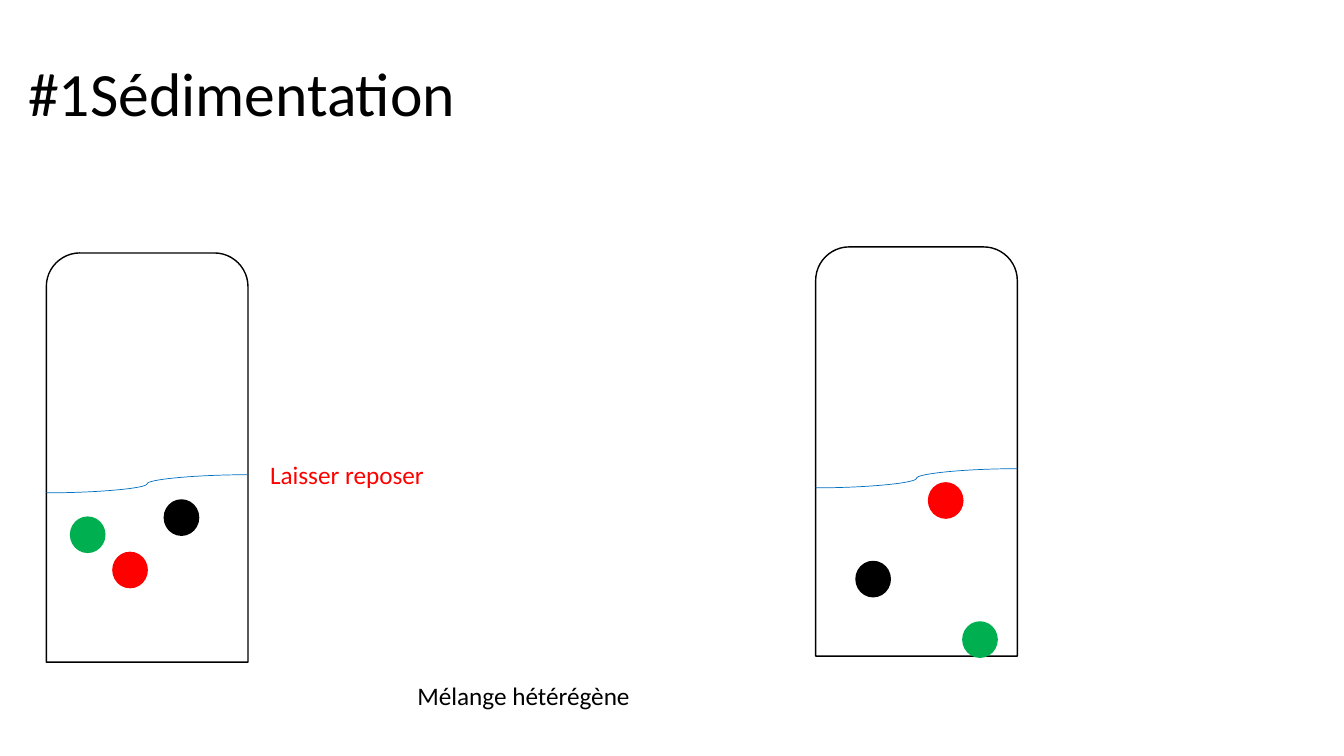
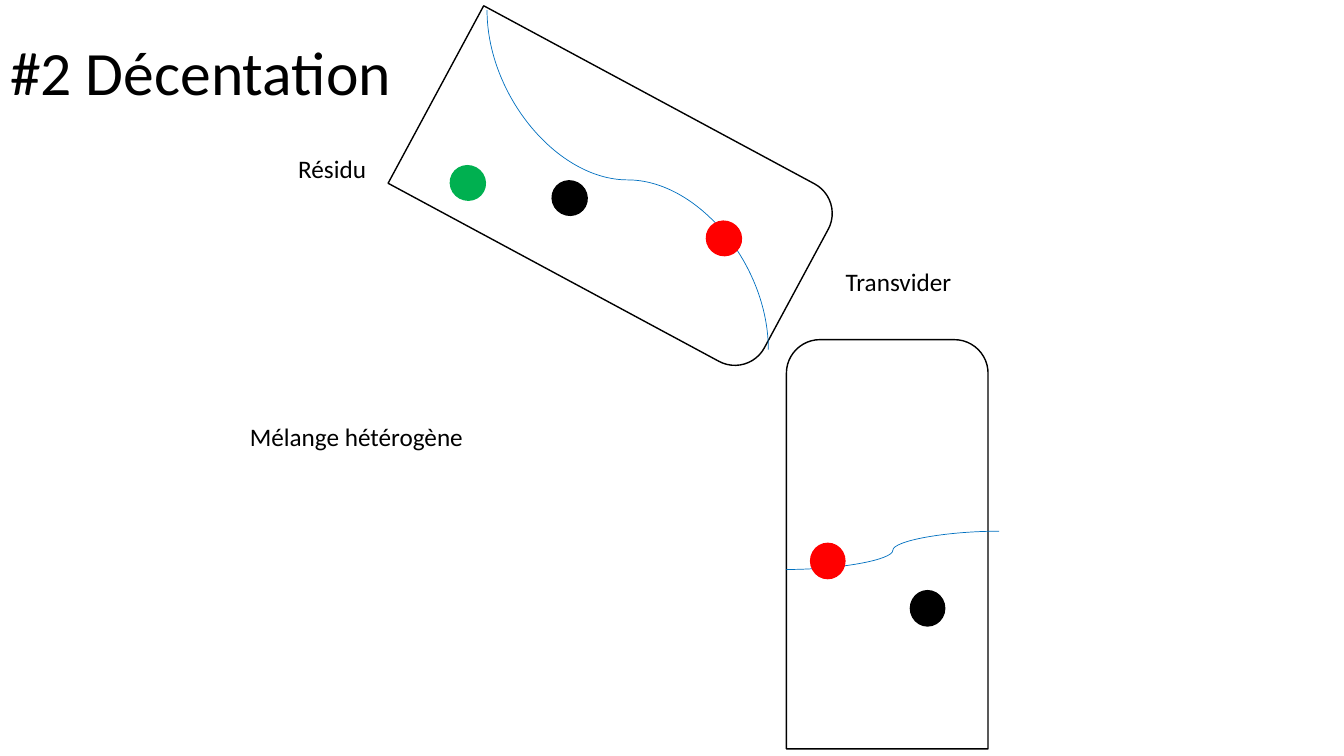
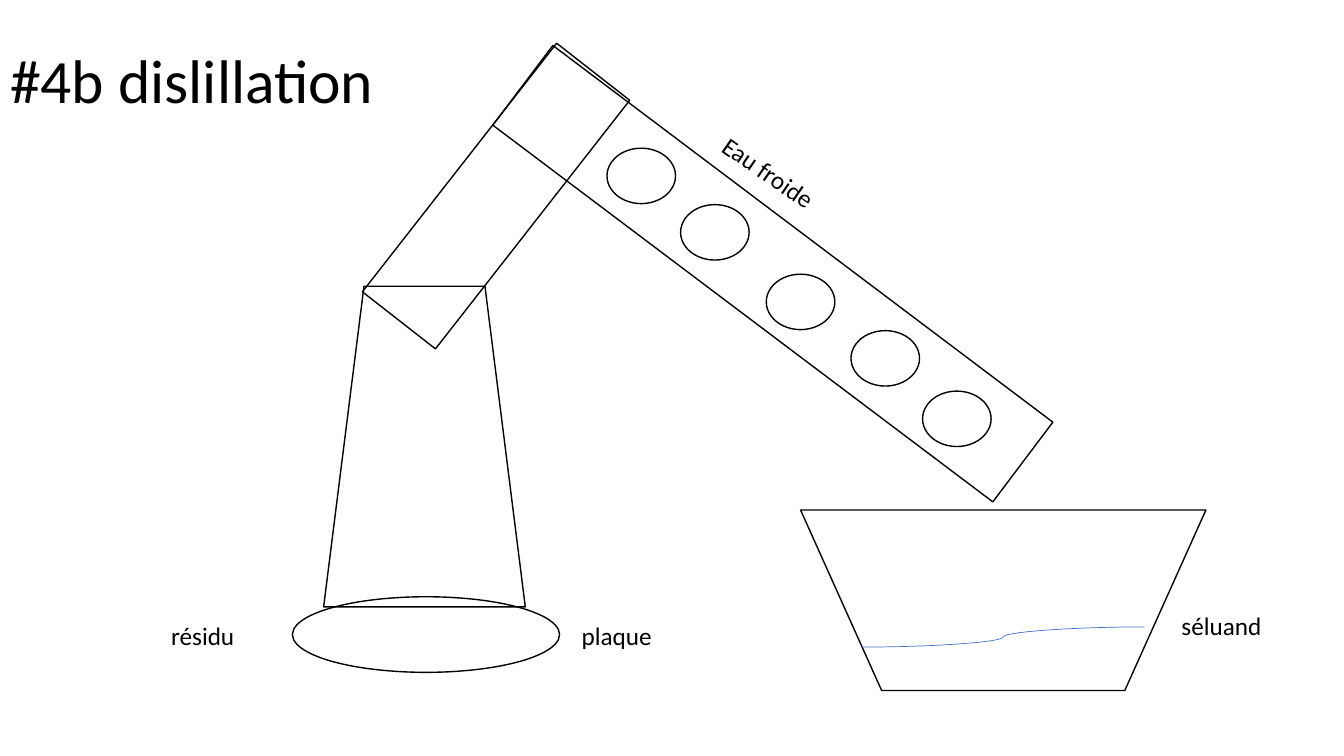
from lxml.etree import SubElement
from pptx import Presentation
from pptx.dml.color import RGBColor
from pptx.enum.shapes import MSO_CONNECTOR, MSO_SHAPE
from pptx.enum.text import MSO_ANCHOR, MSO_AUTO_SIZE, PP_ALIGN
from pptx.oxml.ns import qn
from pptx.util import Emu, Pt

FONT = "Calibri"
BLACK = RGBColor(0x00, 0x00, 0x00)
RED = RGBColor(0xFF, 0x00, 0x00)
GREEN = RGBColor(0x00, 0xB0, 0x50)
WATER = RGBColor(0x00, 0x70, 0xC0)
SOLVENT = RGBColor(0x44, 0x72, 0xC4)

EMU_PER_PX = 9144
TITLE_SIZE = (1150, 145)
TUBE_SIZE = (200, 406)
PARTICLE_SIZE = (34, 35)
COIL_SIZE = (68, 55)
LABEL_HEIGHT = 40

TUBE = MSO_SHAPE.ROUND_2_SAME_RECTANGLE
FLASK = MSO_SHAPE.FLOWCHART_MANUAL_OPERATION
OVAL = MSO_SHAPE.OVAL
PIPE = MSO_SHAPE.RECTANGLE

COILS = [(602, 147), (675, 203), (760, 272), (844, 328), (915, 388)]

# Vessels: preset, position, size, rotation. Surfaces: start, end, colour, rotation.
# Particles: position, colour, rotation. Labels: text, position, width, colour, rotation.
SLIDES = [
    {
        "title": ("#1Sédimentation", (18, 23)),
        "vessels": [(TUBE, (46, 251), TUBE_SIZE, 0), (TUBE, (809, 245), TUBE_SIZE, 0)],
        "surfaces": [((46, 489), (246, 471), WATER, 0), ((809, 484), (1009, 465), WATER, 0)],
        "particles": [
            ((70, 513), GREEN, 0), ((112, 548), RED, 0), ((163, 496), BLACK, 0),
            ((955, 617), GREEN, 0), ((921, 479), RED, 0), ((849, 557), BLACK, 0),
        ],
        "labels": [
            ("Laisser reposer", (258, 451), 200, RED, 0),
            ("Mélange hétérégène", (404, 670), 285, BLACK, 0),
        ],
    },
    {
        "title": ("#2 Décentation", (0, 2)),
        "vessels": [(TUBE, (511, -13), TUBE_SIZE, 118.3), (TUBE, (780, 337), TUBE_SIZE, 0)],
        "surfaces": [((791, 39), (454, 318), WATER, 270), ((780, 565), (991, 527), WATER, 0)],
        "particles": [
            ((447, 164), GREEN, 118.3), ((701, 219), RED, 118.3), ((548, 179), BLACK, 118.3),
            ((804, 539), RED, 0), ((903, 586), BLACK, 0),
        ],
        "labels": [
            ("Résidu", (286, 147), 200, BLACK, 0),
            ("Transvider", (829, 259), 200, BLACK, 0),
            ("Mélange hétérogène", (238, 413), 363, BLACK, 0),
        ],
    },
    {
        "title": ("#4b dislillation", (0, 10)),
        "vessels": [
            (FLASK, (321, 284), (200, 318), 180),
            (OVAL, (290, 592), (265, 75), 0),
            (PIPE, (446, 38), (92, 313), 38),
            (PIPE, (717, -39), (99, 621), 127),
            *[(OVAL, coil, COIL_SIZE, 0) for coil in COILS],
            (FLASK, (794, 506), (402, 179), 0),
        ],
        "surfaces": [((855, 642), (1135, 622), SOLVENT, 0)],
        "particles": [],
        "labels": [
            ("plaque", (567, 610), 200, BLACK, 0),
            ("résidu", (160, 610), 200, BLACK, 0),
            ("Eau froide", (694, 173), 200, BLACK, 34.6),
            ("séluand", (1162, 601), 200, BLACK, 0),
        ],
    },
]


def px(*lengths):
    return [Emu(length * EMU_PER_PX) for length in lengths]


def set_font(paragraph, size, colour):
    paragraph.font.name = FONT
    paragraph.font.size = Pt(size)
    paragraph.font.color.rgb = colour


def set_title(slide, text, position):
    title = slide.shapes.title
    title.left, title.top, title.width, title.height = px(*position, *TITLE_SIZE)
    frame = title.text_frame
    frame.text = text
    frame.auto_size = MSO_AUTO_SIZE.NONE
    frame.vertical_anchor = MSO_ANCHOR.MIDDLE
    heading = frame.paragraphs[0]
    heading.alignment = PP_ALIGN.LEFT
    heading.line_spacing = 0.9
    set_font(heading, 44, BLACK)


def add_outline(slide, preset, position, size, rotation, colour=BLACK, filled=False):
    outline = slide.shapes.add_shape(preset, *px(*position, *size))
    outline.rotation = rotation
    outline.shadow.inherit = False
    if filled:
        outline.fill.solid()
        outline.fill.fore_color.rgb = colour
    else:
        outline.fill.background()
    outline.line.color.rgb = colour
    outline.line.width = Pt(1)


def add_surface(slide, start, end, colour, rotation):
    surface = slide.shapes.add_connector(MSO_CONNECTOR.CURVE, *px(*start, *end))
    surface.line.color.rgb = colour
    surface.line.width = Pt(0.5)
    properties = surface._element.spPr
    SubElement(properties, qn("a:effectLst"))
    if rotation:
        properties.find(qn("a:xfrm")).set("rot", str(rotation * 60000))


def add_label(slide, text, position, width, colour, rotation):
    label = slide.shapes.add_textbox(*px(*position, width, LABEL_HEIGHT))
    label.rotation = rotation
    frame = label.text_frame
    frame.word_wrap = True
    frame.auto_size = MSO_AUTO_SIZE.SHAPE_TO_FIT_TEXT
    frame.text = text
    set_font(frame.paragraphs[0], 18, colour)


def main():
    deck = Presentation()
    deck.slide_width, deck.slide_height = px(1333, 750)
    for content in SLIDES:
        slide = deck.slides.add_slide(deck.slide_layouts[5])
        set_title(slide, *content["title"])
        for vessel in content["vessels"]:
            add_outline(slide, *vessel)
        for surface in content["surfaces"]:
            add_surface(slide, *surface)
        for position, colour, rotation in content["particles"]:
            add_outline(slide, OVAL, position, PARTICLE_SIZE, rotation, colour, filled=True)
        for label in content["labels"]:
            add_label(slide, *label)
    deck.save("out.pptx")


if __name__ == "__main__":
    main()
